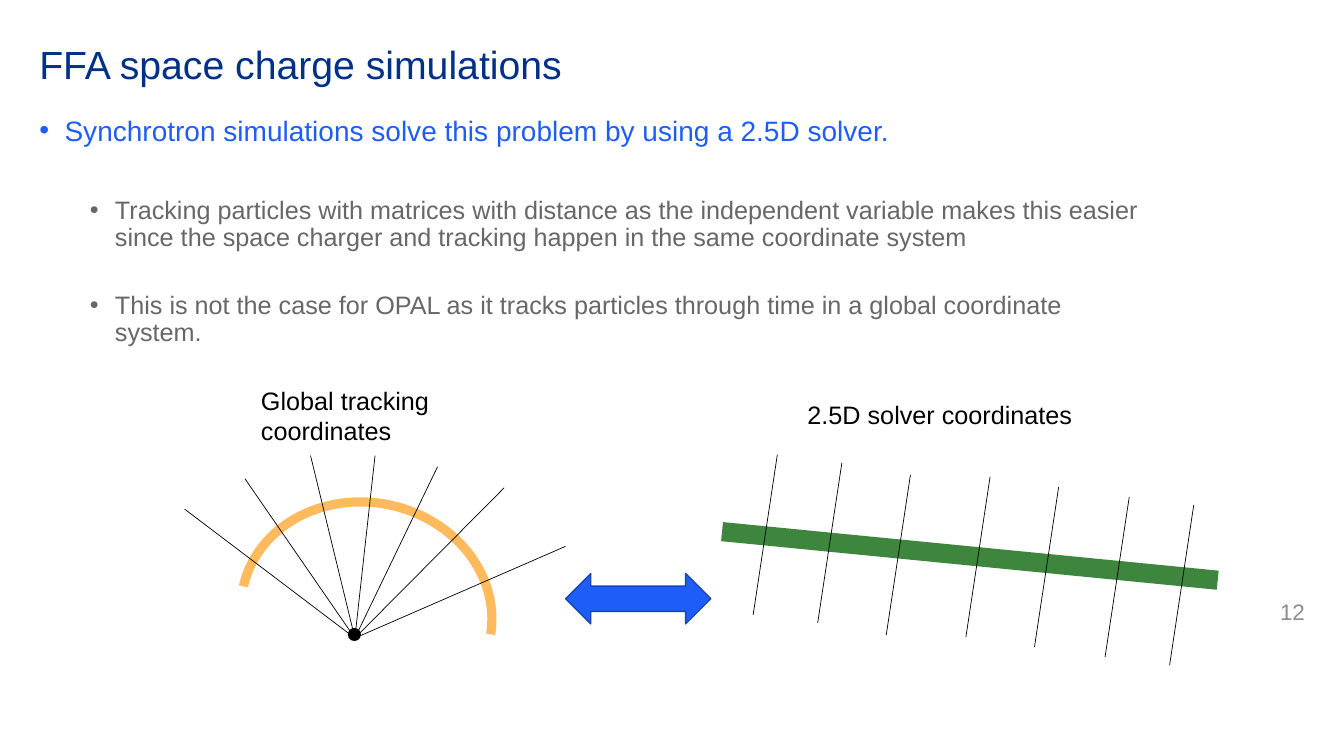
import lxml.etree
import pptx
import pptx.dml.color
import pptx.enum.shapes
import pptx.enum.text
import pptx.oxml.ns
import pptx.util

Inches = pptx.util.Inches
Pt = pptx.util.Pt
SHAPE = pptx.enum.shapes.MSO_SHAPE
ALIGN = pptx.enum.text.PP_ALIGN
ANCHOR = pptx.enum.text.MSO_ANCHOR
FIT = pptx.enum.text.MSO_AUTO_SIZE

NAVY, BLUE, EDGE = "003088", "1E5DF8", "1645B7"
GREY, PALE, BLACK = "676767", "8C8C8C", "000000"
AMBER, GREEN = "FF9D1B", "3E863E"


def color(code):
    return pptx.dml.color.RGBColor.from_string(code)


def child(node, tag, **attrs):
    """Append a child element, such as a:buChar, to an XML node."""
    return lxml.etree.SubElement(node, pptx.oxml.ns.qn(tag), **attrs)


def write(para, text, size=18, ink=BLACK, align=ALIGN.LEFT, line=1.0,
          before=0, level=0, indent=None):
    """Fill a paragraph; an indent in inches gives it a hanging bullet."""
    if indent is not None:
        props = para._p.get_or_add_pPr()
        props.set("marL", str(Inches(indent)))
        props.set("indent", str(Inches(-0.25)))
        child(props, "a:buFont", typeface="Arial")
        child(props, "a:buChar", char="•")
    para.level = level
    para.alignment = align
    para.line_spacing = line
    para.space_before = Pt(before)
    run = para.add_run()
    run.text = text
    run.font.name = "Arial"
    run.font.size = Pt(size)
    run.font.color.rgb = color(ink)


class Deck:
    def __init__(self):
        self.show = pptx.Presentation()
        self.show.slide_width = Inches(13.33)
        self.show.slide_height = Inches(7.5)
        self.slide = self.show.slides.add_slide(self.show.slide_layouts[1])

    def holder(self, index, box):
        """Move a placeholder and return its text frame."""
        item = self.slide.placeholders[index]
        item.left, item.top, item.width, item.height = map(Inches, box)
        frame = item.text_frame
        frame.auto_size = FIT.NONE
        frame.vertical_anchor = ANCHOR.TOP
        return frame

    def title(self, text, box):
        write(self.holder(0, box).paragraphs[0], text, size=28, ink=NAVY,
              line=0.9)

    def bullets(self, items, box):
        frame = self.holder(1, box)
        for i, (text, style) in enumerate(items):
            para = frame.add_paragraph() if i else frame.paragraphs[0]
            write(para, text, line=0.9, **style)

    def label(self, text, box, anchor=ANCHOR.TOP, **style):
        frame = self.slide.shapes.add_textbox(*map(Inches, box)).text_frame
        frame.word_wrap = True
        frame.vertical_anchor = anchor
        write(frame.paragraphs[0], text, **style)

    def shape(self, kind, box, fill, edge=None, turn=0, alpha=None, adjust=()):
        item = self.slide.shapes.add_shape(kind, *map(Inches, box))
        item.shadow.inherit = False
        item.rotation = turn
        for i, value in enumerate(adjust):
            item.adjustments[i] = value
        item.fill.solid()
        item.fill.fore_color.rgb = color(fill)
        if alpha:
            tint = item.fill._xPr.find(".//" + pptx.oxml.ns.qn("a:srgbClr"))
            child(tint, "a:alpha", val=str(alpha * 1000))
        if edge:
            item.line.color.rgb = color(edge)
            item.line.width = Pt(1)
        else:
            item.line.fill.background()

    def line(self, start, end):
        item = self.slide.shapes.add_connector(
            pptx.enum.shapes.MSO_CONNECTOR.STRAIGHT,
            *map(Inches, (*start, *end)))
        item.line.color.rgb = color(BLACK)
        item.line.width = Pt(0.5)
        child(item._element.spPr, "a:effectLst")


def main():
    deck = Deck()
    deck.title("FFA space charge simulations", (0.29, 0.4, 6.92, 0.63))
    sub = dict(ink=GREY, level=1, indent=0.75)
    deck.bullets([
        ("Synchrotron simulations solve this problem by using a 2.5D solver.",
         dict(size=20, ink=BLUE, indent=0.25)),
        ("Tracking particles with matrices with distance as the independent "
         "variable makes this easier since the space charger and tracking "
         "happen in the same coordinate system", dict(sub, before=36)),
        ("This is not the case for OPAL as it tracks particles through time "
         "in a global coordinate system.", dict(sub, before=29)),
    ], (0.29, 1.11, 11.22, 4.76))
    deck.label("12", (10.04, 5.87, 3, 0.4), anchor=ANCHOR.MIDDLE, size=16,
               ink=PALE, align=ALIGN.RIGHT)

    deck.shape(SHAPE.BLOCK_ARC, (2.34, 4.94, 2.59, 2.29), AMBER, turn=11.3,
               alpha=70, adjust=(108.65, 214.98, 0.04))
    deck.shape(SHAPE.RECTANGLE, (7.15, 5.42, 4.94, 0.19), GREEN, turn=5.6)
    deck.shape(SHAPE.OVAL, (3.45, 6.23, 0.13, 0.13), BLACK)

    rays = [(1.83, 5.05), (2.43, 4.75), (3.08, 4.52), (3.72, 4.52),
            (4.34, 4.63), (5, 4.84), (5.61, 5.42)]
    for tip in rays:
        deck.line((3.52, 6.33), tip)

    slices = [(7.47, 6.1), (8.11, 6.18), (8.79, 6.3), (9.58, 6.32),
              (10.26, 6.42), (10.96, 6.52), (11.6, 6.6)]
    for x, y in slices:
        deck.line((x, y), (x + 0.24, y - 1.59))

    deck.shape(SHAPE.LEFT_RIGHT_ARROW, (5.61, 5.69, 1.44, 0.5), BLUE,
               edge=EDGE)
    deck.label("Global tracking coordinates", (2.49, 3.77, 3.12, 0.71))
    deck.label("2.5D solver coordinates", (7.91, 3.91, 3.12, 0.4))
    deck.show.save("out.pptx")


if __name__ == "__main__":
    main()
